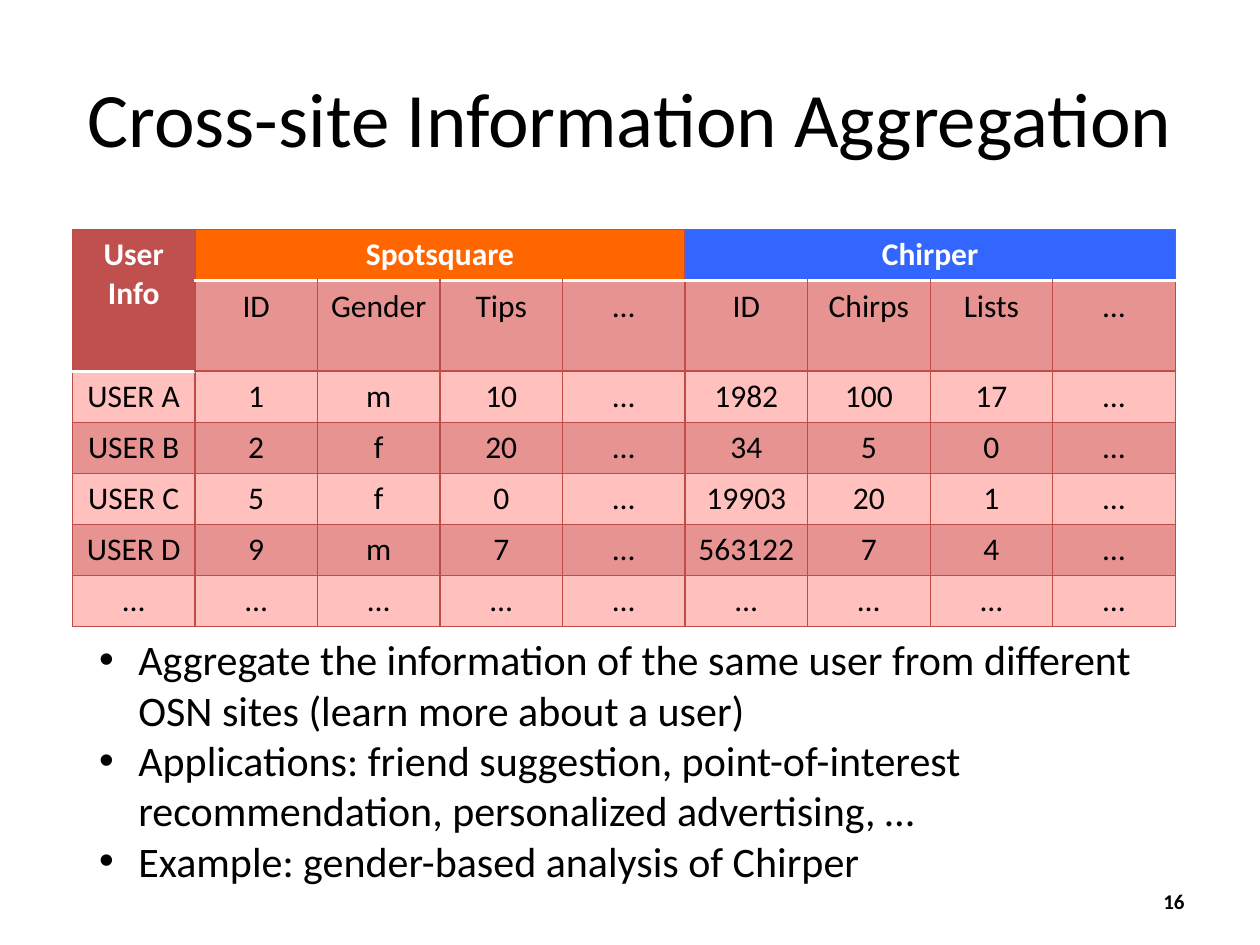
from lxml.etree import SubElement
from pptx import Presentation
from pptx.dml.color import RGBColor
from pptx.enum.text import MSO_ANCHOR as Anchor, PP_ALIGN as Align
from pptx.oxml.ns import qn
from pptx.util import Cm, Pt

FONT = "Calibri"
COLORS = {
    "text": "000000", "white": "FFFFFF", "corner": "C0504D", "grid": "BF4C48",
    "orange": "FF6600", "blue": "3366FF", "dark_row": "E69391", "light_row": "FFC0BE",
}

# Content
TITLE = "Cross-site Information Aggregation"
CORNER = "User Info"
SITES = [("Spotsquare", "orange"), ("Chirper", "blue")]
FIELDS_PER_SITE = 4
ROWS = [
    ["", "ID", "Gender", "Tips", "…", "ID", "Chirps", "Lists", "…"],
    ["USER A", "1", "m", "10", "…", "1982", "100", "17", "…"],
    ["USER B", "2", "f", "20", "…", "34", "5", "0", "…"],
    ["USER C", "5", "f", "0", "…", "19903", "20", "1", "…"],
    ["USER D", "9", "m", "7", "…", "563122", "7", "4", "…"],
    ["…"] * 9,
]
POINTS = [
    "Aggregate the information of the same user from different OSN sites (learn more about a user)",
    "Applications: friend suggestion, point-of-interest recommendation, personalized advertising, …",
    "Example: gender-based analysis of Chirper",
]
PAGE_NUMBER = "16"

# Table measures in cm
COLUMN_WIDTH, ROW_HEIGHT, FIELD_ROW_HEIGHT = 2.47, 1.03, 1.82


def rgb(name):
    return RGBColor.from_string(COLORS[name])


def write(paragraph, text, size, color="text", bold=False, align=Align.LEFT):
    paragraph.alignment = align
    run = paragraph.add_run()
    run.text = text
    font = run.font
    font.name, font.size, font.bold = FONT, Pt(size), bold
    font.color.rgb = rgb(color)


def add_frame(slide, left, top, width, height, anchor=Anchor.TOP):
    frame = slide.shapes.add_textbox(Cm(left), Cm(top), Cm(width), Cm(height)).text_frame
    frame.word_wrap = True
    frame.vertical_anchor = anchor
    return frame


def set_borders(cell, white_sides):
    properties = cell._tc.get_or_add_tcPr()
    for side in "LRTB":
        is_white = side in white_sides
        line = SubElement(properties, qn(f"a:ln{side}"), w=str(Pt(2 if is_white else 0.75)))
        color = SubElement(SubElement(line, qn("a:solidFill")), qn("a:srgbClr"))
        color.set("val", COLORS["white" if is_white else "grid"])


def paint(cell, color, white_sides=""):
    set_borders(cell, white_sides)
    cell.fill.solid()
    cell.fill.fore_color.rgb = rgb(color)


def add_user_table(slide):
    row_count, column_count = len(ROWS) + 1, len(ROWS[0])
    heights = [ROW_HEIGHT, FIELD_ROW_HEIGHT] + [ROW_HEIGHT] * (row_count - 2)
    users = slide.shapes.add_table(
        row_count, column_count, Cm(1.46), Cm(4.63),
        Cm(COLUMN_WIDTH * column_count), Cm(sum(heights))).table
    for column in users.columns:
        column.width = Cm(COLUMN_WIDTH)
    for row, height in zip(users.rows, heights):
        row.height = Cm(height)

    # Header: corner cell over two rows, then one cell for each site
    users.cell(0, 0).merge(users.cell(1, 0))
    paint(users.cell(0, 0), "corner", "B")
    paint(users.cell(1, 0), "corner", "B")
    write(users.cell(0, 0).text_frame.paragraphs[0], CORNER, 18, "white", True, Align.CENTER)
    for index, (site, color) in enumerate(SITES):
        first = 1 + index * FIELDS_PER_SITE
        last = first + FIELDS_PER_SITE - 1
        users.cell(0, first).merge(users.cell(0, last))
        for c in range(first, last + 1):
            paint(users.cell(0, c), color, "B")
        write(users.cell(0, first).text_frame.paragraphs[0], site, 18, "white", True, Align.CENTER)

    # Field names and users in alternating rows
    for r, values in enumerate(ROWS, start=1):
        for c, value in enumerate(values):
            if not value:
                continue
            below_header = r == (2 if c == 0 else 1)
            cell = users.cell(r, c)
            paint(cell, "dark_row" if r % 2 else "light_row", "T" if below_header else "")
            write(cell.text_frame.paragraphs[0], value, 18, align=Align.CENTER)


def add_points(slide):
    frame = add_frame(slide, 1.75, 12.65, 22.1, 5.38)
    for index, point in enumerate(POINTS):
        paragraph = frame.add_paragraph() if index else frame.paragraphs[0]
        write(paragraph, point, 24)
        properties = paragraph._p.get_or_add_pPr()
        properties.set("marL", str(Cm(0.79)))
        properties.set("indent", str(-Cm(0.79)))
        SubElement(properties, qn("a:buFont"), typeface="Arial")
        SubElement(properties, qn("a:buChar"), char="•")


def main():
    deck = Presentation()
    deck.slide_width, deck.slide_height = Cm(25.4), Cm(19.05)
    slide = deck.slides.add_slide(deck.slide_layouts[6])

    title = add_frame(slide, 1.27, 0.76, 22.86, 3.18, Anchor.MIDDLE)
    write(title.paragraphs[0], TITLE, 44, align=Align.CENTER)
    add_user_table(slide)
    add_points(slide)
    page = add_frame(slide, 18.2, 17.65, 5.93, 1.02, Anchor.MIDDLE)
    write(page.paragraphs[0], PAGE_NUMBER, 12, bold=True, align=Align.RIGHT)

    deck.save("out.pptx")


if __name__ == "__main__":
    main()
